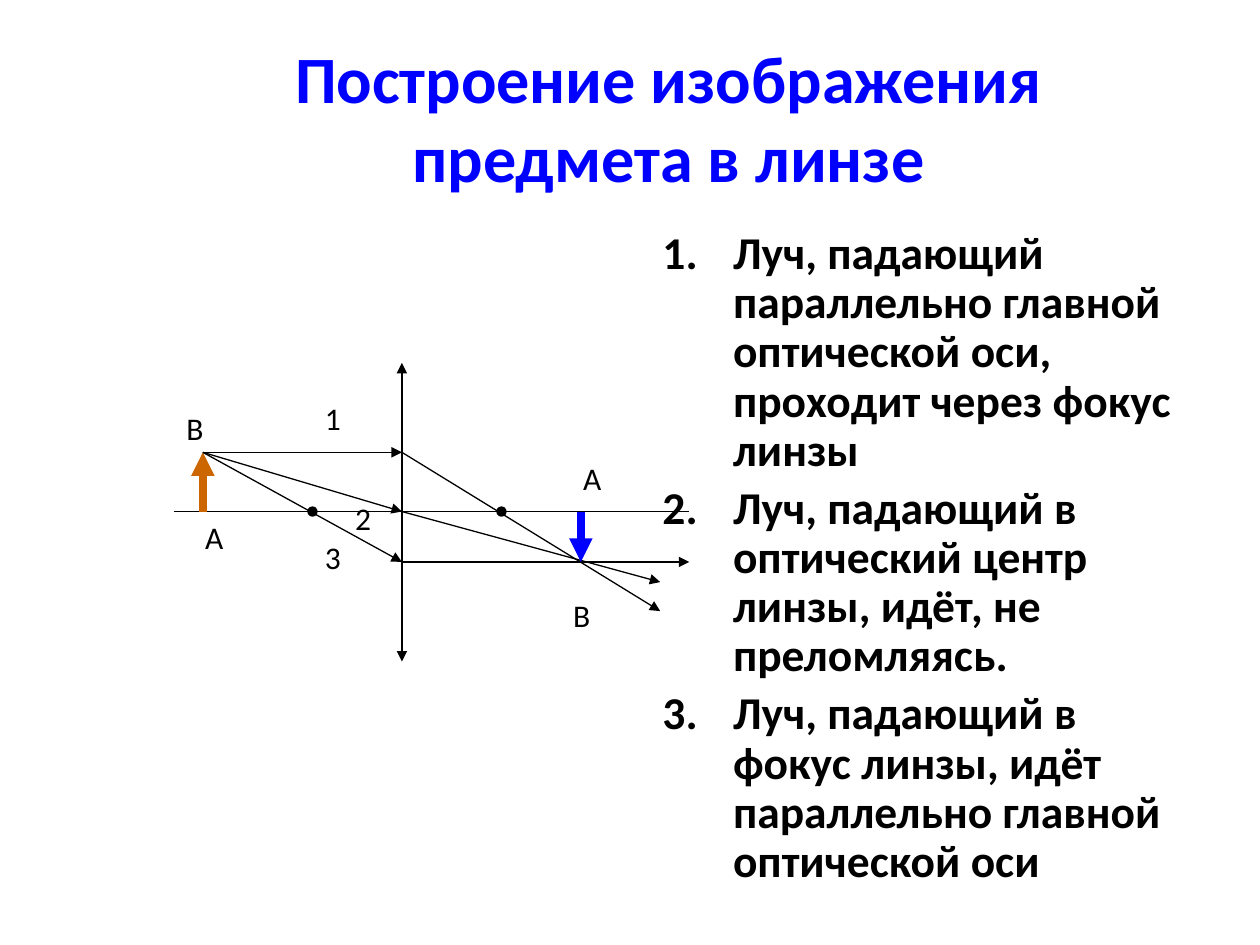
from lxml import etree
from pptx import Presentation
from pptx.dml.color import RGBColor
from pptx.enum import shapes, text
from pptx.oxml import ns
from pptx.util import Inches, Pt

FONT = "Calibri"
BLACK = RGBColor(0x00, 0x00, 0x00)
BLUE = RGBColor(0x00, 0x00, 0xFF)
ORANGE = RGBColor(0xCC, 0x66, 0x00)

RULES = [
    "Луч, падающий параллельно главной оптической оси, проходит через фокус линзы",
    "Луч, падающий в оптический центр линзы, идёт, не преломляясь.",
    "Луч, падающий в фокус линзы, идёт параллельно главной оптической оси",
]


def style(paragraph, size, color, bold=False):
    """Set the font of a whole paragraph."""
    font = paragraph.font
    font.name, font.size, font.bold = FONT, Pt(size), bold
    font.color.rgb = color


def add_text(slide, left, top, width, height):
    """Add an empty wrapping text box and return its frame."""
    frame = slide.shapes.add_textbox(
        Inches(left), Inches(top), Inches(width), Inches(height)).text_frame
    frame.word_wrap = True
    return frame


def add_line(slide, start, end, color=BLACK, width=0.75, head=None, tail=None):
    """Draw a straight line with optional end marks."""
    line = slide.shapes.add_connector(
        shapes.MSO_CONNECTOR.STRAIGHT, *map(Inches, start + end))
    line.line.color.rgb = color
    line.line.width = Pt(width)
    outline = line.line._get_or_add_ln()
    for tag, mark in (("a:headEnd", head), ("a:tailEnd", tail)):
        if mark:
            etree.SubElement(outline, ns.qn(tag), type=mark)
    etree.SubElement(line._element.spPr, ns.qn("a:effectLst"))


def add_title(slide, left, top, width, height):
    """Write the centred heading."""
    frame = add_text(slide, left, top, width, height)
    frame.vertical_anchor = text.MSO_ANCHOR.MIDDLE
    heading = frame.paragraphs[0]
    heading.text = "Построение изображения предмета в линзе"
    heading.alignment = text.PP_ALIGN.CENTER
    style(heading, 37.8, BLUE, bold=True)


def add_rules(slide, left, top, width, height):
    """Write the numbered list of ray rules."""
    frame = add_text(slide, left, top, width, height)
    indent = Inches(0.56)
    for index, wording in enumerate(RULES):
        rule = frame.paragraphs[0] if index == 0 else frame.add_paragraph()
        rule.text = wording
        rule.line_spacing = 0.9
        rule.space_before = Pt(5.2)
        style(rule, 26, BLACK, bold=True)
        properties = rule._p.get_or_add_pPr()
        properties.set("marL", str(indent))
        properties.set("indent", str(-indent))
        numbering = etree.Element(ns.qn("a:buAutoNum"), type="arabicPeriod")
        properties.find(ns.qn("a:defRPr")).addprevious(numbering)


def add_lens_diagram(slide, left, top, width, height):
    """Draw the lens, its axis, the object, its image and three rays."""
    right, bottom = left + width, top + height
    axis, lens = top + 1.18, left + 1.81
    ray_end = right - 0.23
    object_foot, object_tip = (left + 0.23, axis), (left + 0.23, top + 0.71)
    image_foot, image_tip = (left + 3.23, axis), (left + 3.23, top + 1.58)

    add_line(slide, (left, axis), (right, axis))
    add_line(slide, (lens, top), (lens, bottom), head="triangle", tail="triangle")
    add_line(slide, object_foot, object_tip, ORANGE, 4.5, tail="triangle")

    rays = [
        ((lens, object_tip[1]), (ray_end, top + 1.97)),
        ((lens, axis), (ray_end, top + 1.74)),
        ((lens, image_tip[1]), (right, image_tip[1])),
    ]
    for crossing, end in rays:
        add_line(slide, object_tip, crossing, tail="triangle")
        add_line(slide, crossing, end, tail="triangle")

    add_line(slide, image_foot, image_tip, BLUE, 4.5, tail="triangle")
    add_line(slide, (left + 1.1, axis), (left + 2.6, axis), head="oval", tail="oval")

    labels = [
        ("1", 1.1, 0.24), ("2", 1.34, 1.03), ("3", 1.1, 1.34),
        ("А", 0.15, 1.18), ("В", 0, 0.32),
        ("А", 3.15, 0.71), ("В", 3.07, 1.8),
    ]
    for wording, x, y in labels:
        label = add_text(slide, left + x, top + y, 0.32, 0.5).paragraphs[0]
        label.text = wording
        style(label, 18, BLACK)


def main():
    """Build and save the slide."""
    deck = Presentation()
    deck.slide_width, deck.slide_height = Inches(10), Inches(7.5)
    slide = deck.slides.add_slide(deck.slide_layouts[6])
    add_title(slide, 1.14, 0.36, 8.33, 1.13)
    add_rules(slide, 5.16, 1.78, 4.46, 5.35)
    add_lens_diagram(slide, 1.38, 2.88, 4.09, 2.37)
    deck.save("out.pptx")


if __name__ == "__main__":
    main()
